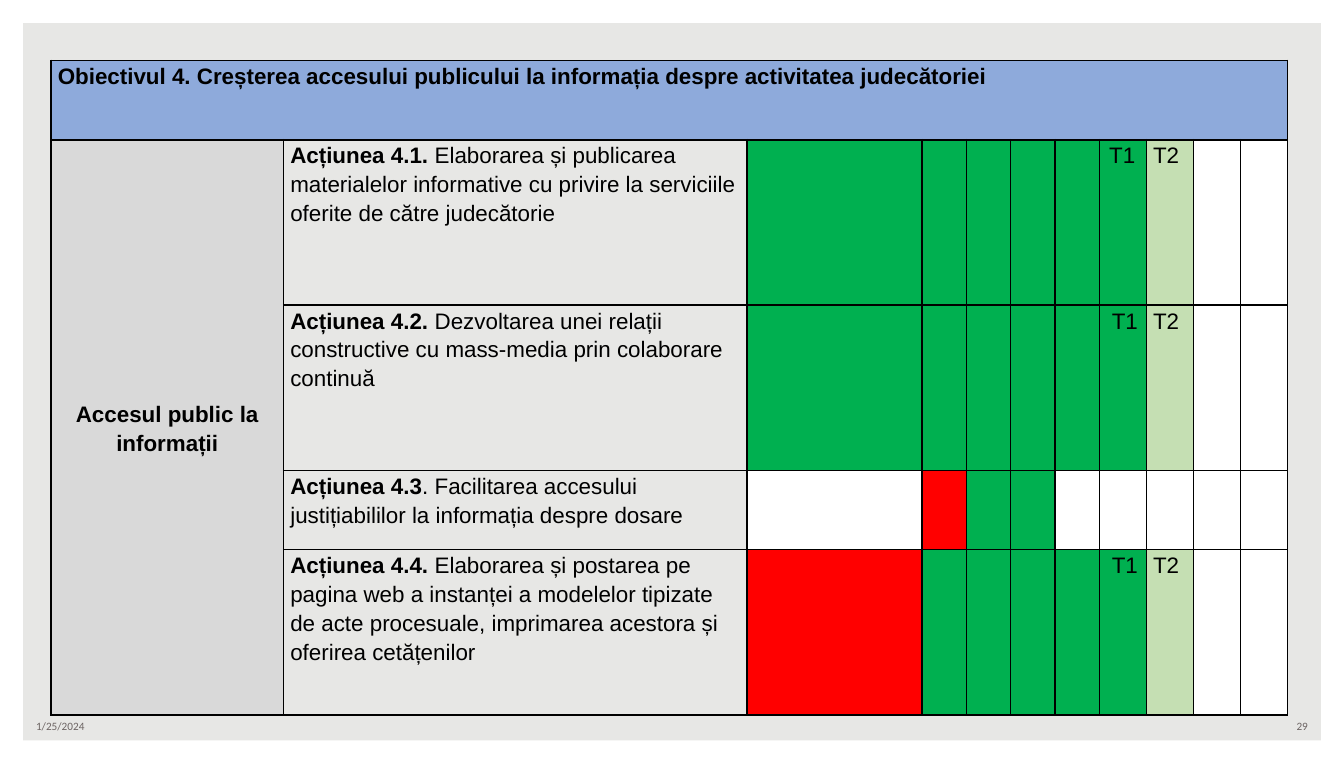
"""Build the action plan slide for objective 4, with its schedule table."""
from dataclasses import dataclass
from typing import Optional

from pptx import Presentation
from pptx.dml.color import RGBColor
from pptx.enum.shapes import MSO_SHAPE
from pptx.enum.text import MSO_ANCHOR, PP_ALIGN
from pptx.oxml import parse_xml
from pptx.oxml.ns import nsdecls
from pptx.util import Inches, Pt

BLACK = RGBColor(0x00, 0x00, 0x00)
WHITE = RGBColor(0xFF, 0xFF, 0xFF)
PAPER = RGBColor(0xE7, 0xE7, 0xE5)
BLUE = RGBColor(0x8E, 0xAA, 0xDB)
GRAY = RGBColor(0xD9, 0xD9, 0xD9)
GREEN = RGBColor(0x00, 0xB0, 0x50)
LIGHT_GREEN = RGBColor(0xC5, 0xDF, 0xB3)
RED = RGBColor(0xFF, 0x00, 0x00)
FOOTER_GRAY = RGBColor(0x6C, 0x64, 0x63)

STATUS = {"G": GREEN, "L": LIGHT_GREEN, "R": RED, "W": WHITE}
COLS = [1.73, 3.45, 1.3] + [0.33] * 4 + [0.35] * 4
ROWS = [0.59, 1.23, 1.23, 0.59, 1.23]
T1_COL, T2_COL = 7, 8
MARGINS = {
    "margin_left": Inches(0.05),
    "margin_right": Inches(0.05),
    "margin_top": 0,
    "margin_bottom": 0,
}


@dataclass
class Span:
    text: str
    bold: bool = False
    size: float = 12
    font: str = "Arial"
    color: RGBColor = BLACK


@dataclass
class Action:
    label: str
    text: str
    status: str
    t1: Optional[list[Span]] = None


@dataclass
class Footer:
    text: str
    left: float
    align: PP_ALIGN


ACTIONS = [
    Action("Acțiunea 4.1. ",
           "Elaborarea și publicarea materialelor informative cu privire la "
           "serviciile oferite de către judecătorie",
           "GGGGGGLWW", [Span(" ", size=6), Span("T1")]),
    Action("Acțiunea 4.2. ",
           "Dezvoltarea unei relații constructive cu mass-media prin "
           "colaborare continuă",
           "GGGGGGLWW", [Span(" T1")]),
    Action("Acțiunea 4.3",
           ". Facilitarea accesului justițiabililor la informația despre dosare",
           "WRGGWWWWW"),
    Action("Acțiunea 4.4. ",
           "Elaborarea și postarea pe pagina web a instanței a modelelor "
           "tipizate de acte procesuale, imprimarea acestora și oferirea cetățenilor",
           "RGGGGGLWW", [Span(" T1")]),
]
FOOTERS = [
    Footer("1/25/2024", 0.17, PP_ALIGN.LEFT),
    Footer("29", 7.5, PP_ALIGN.RIGHT),
]


def add_spans(p, spans: list[Span]) -> None:
    for span in spans:
        r = p.add_run()
        r.text = span.text
        fmt = {"name": span.font, "size": Pt(span.size), "bold": span.bold}
        for name, value in fmt.items():
            setattr(r.font, name, value)
        r.font.color.rgb = span.color


def write_cell(cell, spans: list[Span], align: PP_ALIGN,
               anchor: MSO_ANCHOR = MSO_ANCHOR.TOP) -> None:
    for name, value in {**MARGINS, "vertical_anchor": anchor}.items():
        setattr(cell, name, value)
    p = cell.text_frame.paragraphs[0]
    fmt = {"alignment": align, "line_spacing": 1.15, "space_after": Pt(12)}
    for name, value in fmt.items():
        setattr(p, name, value)
    add_spans(p, spans)


def add_borders(cell) -> None:
    tc_pr = cell._tc.get_or_add_tcPr()
    for side in ("lnL", "lnR", "lnT", "lnB"):
        tc_pr.append(parse_xml(
            f'<a:{side} {nsdecls("a")} w="{Pt(1)}"><a:solidFill>'
            f'<a:srgbClr val="{BLACK}"/></a:solidFill></a:{side}>'))


def fill_cell(cell, color: RGBColor) -> None:
    cell.fill.solid()
    cell.fill.fore_color.rgb = color


def add_frame(s) -> None:
    sp = s.shapes.add_shape(MSO_SHAPE.FRAME, 0, 0, Inches(10), Inches(5.68))
    sp.adjustments[0] = 0.03
    sp.shadow.inherit = False
    sp.fill.solid()
    sp.fill.fore_color.rgb = WHITE
    sp.line.fill.background()


def add_footer(s, footer: Footer) -> None:
    sp = s.shapes.add_textbox(Inches(footer.left), Inches(5.3), Inches(2.33), Inches(0.2))
    tf = sp.text_frame
    tf.word_wrap = True
    tf.vertical_anchor = MSO_ANCHOR.MIDDLE
    p = tf.paragraphs[0]
    p.alignment = footer.align
    add_spans(p, [Span(footer.text, size=6, font="Calibri", color=FOOTER_GRAY)])


def add_plan(s) -> None:
    table = s.shapes.add_table(len(ROWS), len(COLS), Inches(0.38), Inches(0.45),
                               Inches(sum(COLS)), Inches(sum(ROWS))).table
    table.first_row = table.horz_banding = False
    for col, width in zip(table.columns, COLS):
        col.width = Inches(width)
    for row, height in zip(table.rows, ROWS):
        row.height = Inches(height)
    for cell in table.iter_cells():
        add_borders(cell)
        cell.fill.background()

    title, area = table.cell(0, 0), table.cell(1, 0)
    title.merge(table.cell(0, len(COLS) - 1))
    area.merge(table.cell(len(ROWS) - 1, 0))
    fill_cell(title, BLUE)
    fill_cell(area, GRAY)
    write_cell(title, [Span("Obiectivul 4. Creșterea accesului publicului la informația "
                            "despre activitatea judecătoriei", True)], PP_ALIGN.JUSTIFY)
    write_cell(area, [Span("Accesul public la informații", True)],
               PP_ALIGN.CENTER, MSO_ANCHOR.MIDDLE)

    for row, action in enumerate(ACTIONS, 1):
        write_cell(table.cell(row, 1), [Span(action.label, True), Span(action.text)],
                   PP_ALIGN.LEFT)
        for col, code in enumerate(action.status, 2):
            fill_cell(table.cell(row, col), STATUS[code])
        if action.t1:
            write_cell(table.cell(row, T1_COL), action.t1, PP_ALIGN.JUSTIFY)
            write_cell(table.cell(row, T2_COL), [Span("T2")], PP_ALIGN.JUSTIFY)


def main() -> None:
    prs = Presentation()
    prs.slide_width, prs.slide_height = Inches(10), Inches(5.67)
    s = prs.slides.add_slide(prs.slide_layouts[6])
    s.background.fill.solid()
    s.background.fill.fore_color.rgb = PAPER
    add_frame(s)
    for footer in FOOTERS:
        add_footer(s, footer)
    add_plan(s)
    prs.save("out.pptx")


if __name__ == "__main__":
    main()
